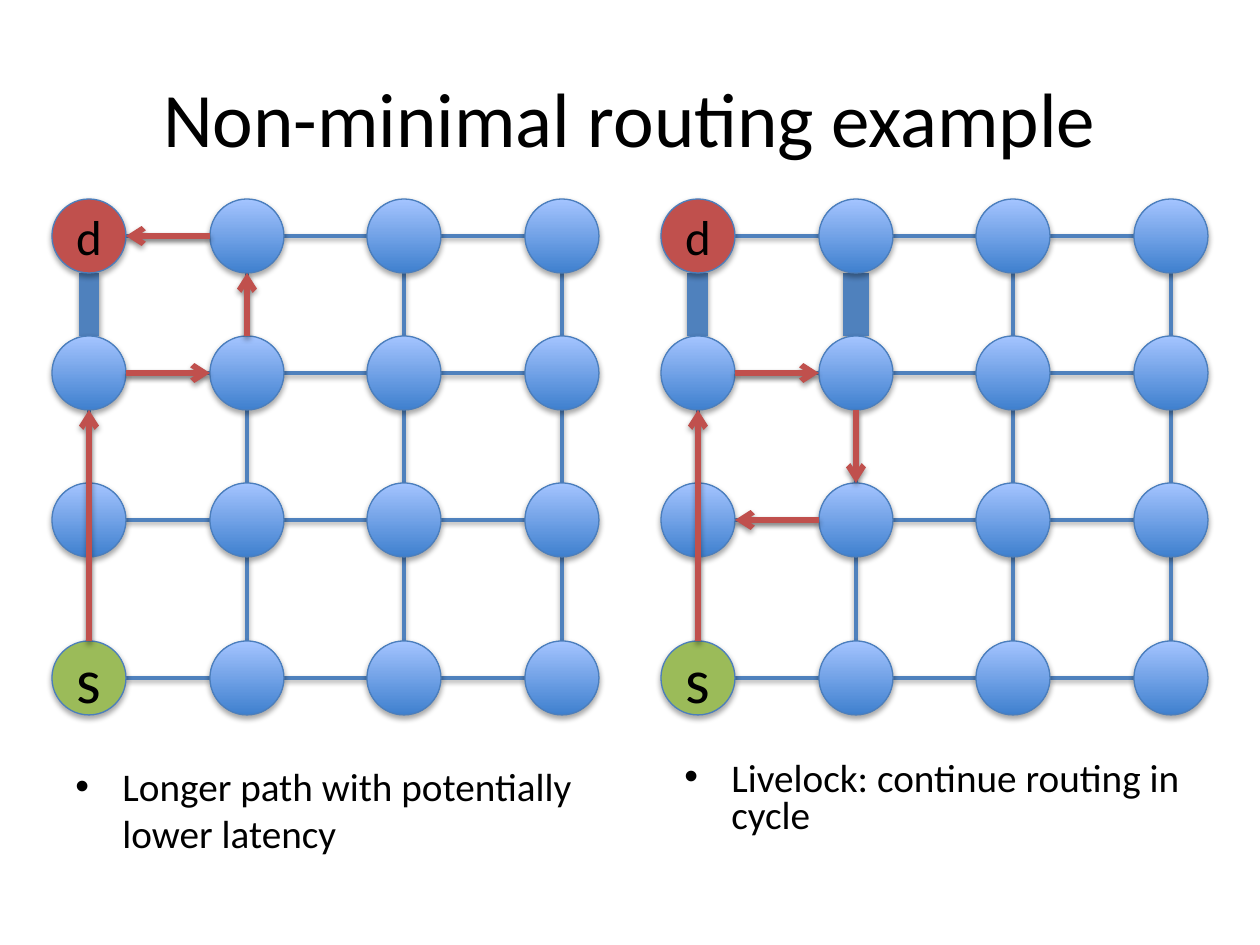
from dataclasses import dataclass
from itertools import product

from lxml.etree import SubElement
from pptx import Presentation
from pptx.dml.color import RGBColor as RGB
from pptx.enum.shapes import MSO_CONNECTOR as CONNECTOR, MSO_SHAPE as SHAPE
from pptx.enum.text import MSO_ANCHOR as ANCHOR, PP_ALIGN as ALIGN
from pptx.oxml.ns import qn
from pptx.util import Emu, Pt


@dataclass(frozen=True)
class Theme:
    font: str = "Calibri"
    text: RGB = RGB(0, 0, 0)
    edge: RGB = RGB(0x4F, 0x81, 0xBD)
    route: RGB = RGB(0xC0, 0x50, 0x4D)
    source: RGB = RGB(0x9B, 0xBB, 0x59)
    outline: RGB = RGB(0x4B, 0x7E, 0xBC)
    node_bottom: RGB = RGB(0x3F, 0x80, 0xCE)
    node_top: RGB = RGB(0xA4, 0xC4, 0xFF)
    title_size: float = 44
    body_size: float = 22.4
    destination_size: float = 28
    source_size: float = 36


theme = Theme()
PX = 914400 // 126
NODE = 74
RADIUS = NODE // 2
COLUMNS = (89, 247, 404, 562)
ROWS = (236, 373, 520, 678)
PANEL_STEP = 609

presentation = Presentation()
presentation.slide_width = Emu(1260 * PX)
presentation.slide_height = Emu(945 * PX)
slide = presentation.slides.add_slide(presentation.slide_layouts[6])


def add_shadow(properties, distance, opacity):
    for old in properties.findall(qn("a:effectLst")):
        properties.remove(old)
    effects = SubElement(properties, qn("a:effectLst"))
    shadow = SubElement(effects, qn("a:outerShdw"), blurRad="40000",
                        dist=str(distance), dir="5400000", rotWithShape="0")
    color = SubElement(shadow, qn("a:srgbClr"), val="000000")
    SubElement(color, qn("a:alpha"), val=str(opacity * 1000))


def add_link(panel, start, end, color, width, arrow=False):
    (x1, y1), (x2, y2) = [(COLUMNS[c] + panel * PANEL_STEP, ROWS[r]) for c, r in (start, end)]
    dx = RADIUS * ((x2 > x1) - (x2 < x1))
    dy = RADIUS * ((y2 > y1) - (y2 < y1))
    points = (x1 + dx, y1 + dy, x2 - dx, y2 - dy)
    link = slide.shapes.add_connector(CONNECTOR.STRAIGHT, *[Emu(v * PX) for v in points])
    link.line.color.rgb = color
    link.line.width = Pt(width)
    if arrow:
        SubElement(link.line._get_or_add_ln(), qn("a:tailEnd"), type="arrow")
    add_shadow(link._element.spPr, 20000, 38)


thick_links = (
    {((0, 0), (0, 1)): 12},
    {((0, 0), (0, 1)): 12, ((1, 0), (1, 1)): 15},
)
routes = (
    [((0, 3), (0, 1)), ((0, 1), (1, 1)), ((1, 1), (1, 0)), ((1, 0), (0, 0))],
    [((0, 3), (0, 1)), ((0, 1), (1, 1)), ((1, 1), (1, 2)), ((1, 2), (0, 2))],
)
endpoints = {
    (0, 0): ("d", theme.route, theme.destination_size),
    (0, 3): ("s", theme.source, theme.source_size),
}
grid = list(product(range(4), repeat=2))

for panel, (thick, route) in enumerate(zip(thick_links, routes)):
    for column, row in grid:
        for neighbor in ((column + 1, row), (column, row + 1)):
            if neighbor in grid:
                width = thick.get(((column, row), neighbor), 2)
                add_link(panel, (column, row), neighbor, theme.edge, width)

    for column, row in grid:
        left = COLUMNS[column] + panel * PANEL_STEP - RADIUS
        top = ROWS[row] - RADIUS
        node = slide.shapes.add_shape(
            SHAPE.OVAL, *[Emu(v * PX) for v in (left, top, NODE, NODE)])
        node.line.color.rgb = theme.outline
        node.line.width = Pt(0.75)
        if (column, row) in endpoints:
            label, color, size = endpoints[column, row]
            node.fill.solid()
            node.fill.fore_color.rgb = color
            node.text_frame.vertical_anchor = ANCHOR.MIDDLE
            paragraph = node.text_frame.paragraphs[0]
            paragraph.text = label
            paragraph.alignment = ALIGN.CENTER
            paragraph.font.name = theme.font
            paragraph.font.size = Pt(size)
            paragraph.font.color.rgb = theme.text
        else:
            node.fill.gradient()
            node.fill.gradient_angle = 90
            for stop, color in zip(node.fill.gradient_stops, (theme.node_bottom, theme.node_top)):
                stop.color.rgb = color
        add_shadow(node._element.spPr, 23000, 35)

    for start, end in route:
        add_link(panel, start, end, theme.route, 3.25, arrow=True)

texts = (
    ("Non-minimal routing example", (63, 38, 1134, 157), theme.title_size, None),
    ("Longer path with potentially lower latency", (63, 756, 535, 88), theme.body_size, 1.0),
    ("Livelock: continue routing in cycle", (672, 756, 535, 88), theme.body_size, 0.8),
)
for text, box, size, spacing in texts:
    frame = slide.shapes.add_textbox(*[Emu(v * PX) for v in box]).text_frame
    frame.word_wrap = True
    paragraph = frame.paragraphs[0]
    paragraph.text = text
    paragraph.font.name = theme.font
    paragraph.font.size = Pt(size)
    paragraph.font.color.rgb = theme.text
    if spacing is None:
        frame.vertical_anchor = ANCHOR.MIDDLE
        paragraph.alignment = ALIGN.CENTER
    else:
        paragraph.line_spacing = spacing
        properties = paragraph._p.get_or_add_pPr()
        properties.set("marL", str(47 * PX))
        properties.set("indent", str(-47 * PX))
        SubElement(properties, qn("a:buFont"), typeface="Arial")
        SubElement(properties, qn("a:buChar"), char="•")
        for defaults in properties.findall(qn("a:defRPr")):
            properties.append(defaults)

presentation.save("out.pptx")
